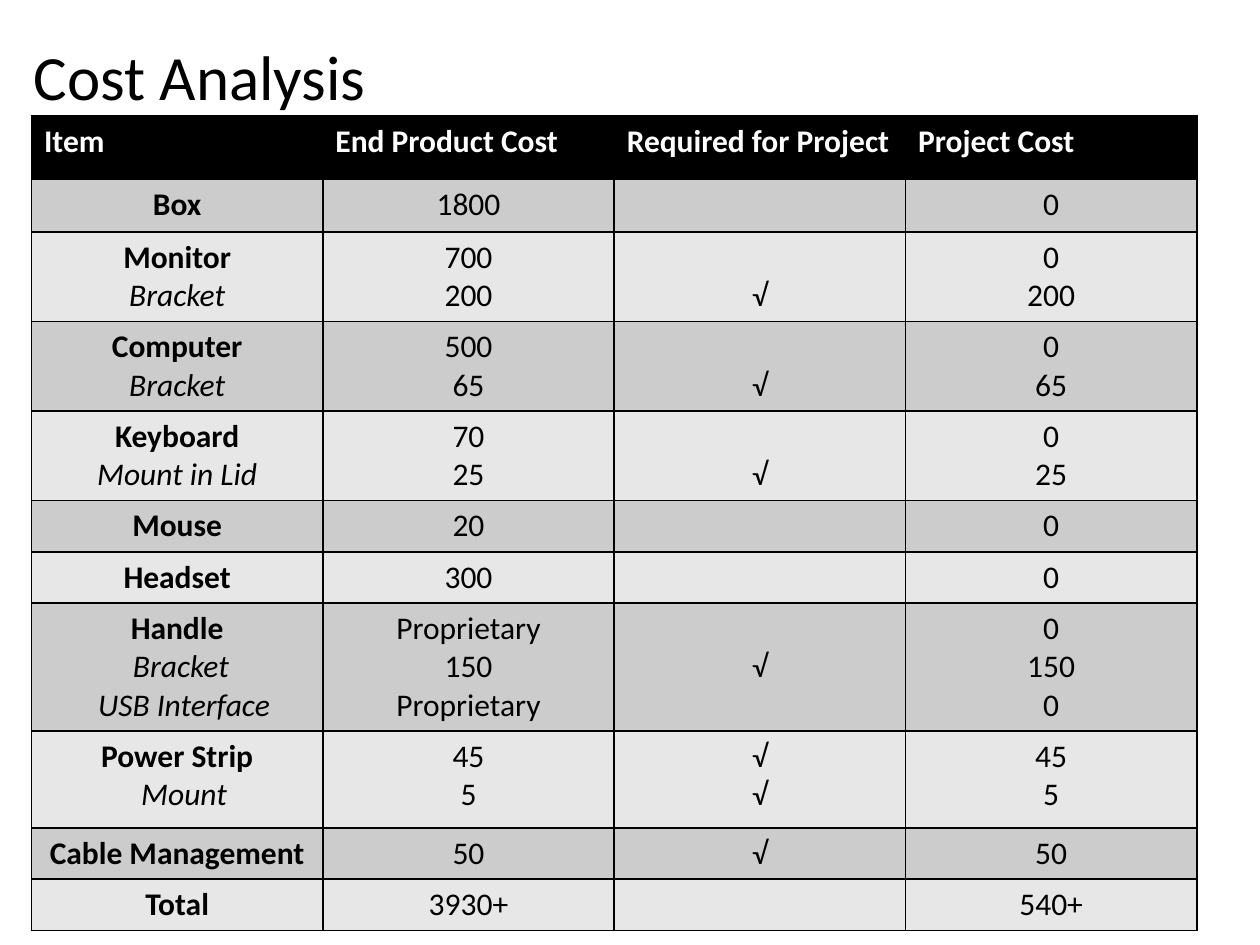
from lxml import etree
from pptx import Presentation
from pptx.dml.color import RGBColor
from pptx.enum.text import MSO_ANCHOR, MSO_AUTO_SIZE, PP_ALIGN
from pptx.oxml.ns import qn
from pptx.util import Inches, Pt

LEFT, CENTER = PP_ALIGN.LEFT, PP_ALIGN.CENTER
TOP, MIDDLE, BOTTOM = MSO_ANCHOR.TOP, MSO_ANCHOR.MIDDLE, MSO_ANCHOR.BOTTOM
GROW = MSO_AUTO_SIZE.SHAPE_TO_FIT_TEXT

FONT = "Calibri"
COLORS = {"text": "000000", "header": "000000", "header_text": "FFFFFF",
          "odd": "CCCCCC", "even": "E7E7E7", "border": "000000"}
TABLE_WIDTH = 9.25
HEADERS = ["Item", "End Product Cost", "Required for Project", "Project Cost"]
COSTS = [
    (0.42, "Box", "1800", "", "0", TOP),
    (0.70, "Monitor\nBracket", "700\n200", "√", "0\n200", BOTTOM),
    (0.70, "Computer\nBracket", "500\n65", "√", "0\n65", BOTTOM),
    (0.70, "Keyboard\nMount in Lid", "70\n25", "√", "0\n25", BOTTOM),
    (0.41, "Mouse", "20", "", "0", TOP),
    (0.40, "Headset", "300", "", "0", TOP),
    (1.00, "Handle\nBracket\nUSB Interface", "Proprietary\n150\nProprietary", "√",
     "0\n150\n0", MIDDLE),
    (0.77, "Power Strip\nMount", "45\n5", "√\n√", "45\n5", TOP),
    (0.40, "Cable Management", "50", "√", "50", TOP),
    (0.40, "Total", "3930+", "", "540+", TOP),
]
INDENTS = {("Handle", "Bracket"): 0.06, ("Handle", "USB Interface"): 0.11,
           ("Power Strip", "Mount"): 0.11}


def style_font(font, size, color, bold=False, italic=False):
    font.name = FONT
    font.size = Pt(size)
    font.bold = bold
    font.italic = italic
    font.color.rgb = RGBColor.from_string(COLORS[color])


def add_borders(cell):
    tcPr = cell._tc.get_or_add_tcPr()
    for i, side in enumerate(("lnL", "lnR", "lnT", "lnB")):
        ln = etree.Element(qn(f"a:{side}"), w=str(Pt(1)))
        fill = etree.SubElement(ln, qn("a:solidFill"))
        etree.SubElement(fill, qn("a:srgbClr"), val=COLORS["border"])
        tcPr.insert(i, ln)


def fill_cell(cell, text, fill, color="text", align=CENTER, anchor=TOP, bold=False):
    cell.fill.solid()
    cell.fill.fore_color.rgb = RGBColor.from_string(COLORS[fill])
    cell.vertical_anchor = anchor
    add_borders(cell)
    cell.text_frame.text = text
    for p in cell.text_frame.paragraphs:
        p.alignment = align
        style_font(p.font, 18, color, bold)
        for r in p.runs:
            style_font(r.font, 18, color, bold)


def style_item(cell):
    item, *parts = cell.text_frame.paragraphs
    for p in parts:
        indent = INDENTS.get((item.text, p.text))
        if indent:
            p._p.get_or_add_pPr().set("marL", str(Inches(indent)))
        for r in p.runs:
            style_font(r.font, 18, "text", italic=True)


def add_title(slide, text):
    sp = slide.shapes.add_textbox(Inches(0.17), Inches(0.25), Inches(2.86), Inches(0.71))
    tf = sp.text_frame
    tf.word_wrap = False
    tf.auto_size = GROW
    tf.text = text
    style_font(tf.paragraphs[0].runs[0].font, 36, "text")


def add_cost_table(slide):
    heights = [0.5] + [row[0] for row in COSTS]
    table = slide.shapes.add_table(
        len(heights), len(HEADERS), Inches(0.25), Inches(0.92),
        Inches(TABLE_WIDTH), Inches(sum(heights))).table
    for col in table.columns:
        col.width = Inches(TABLE_WIDTH / len(HEADERS))
    for row, height in zip(table.rows, heights):
        row.height = Inches(height)
    for c, text in enumerate(HEADERS):
        fill_cell(table.cell(0, c), text, "header", "header_text", LEFT, bold=True)
    for n, (_, *texts, check_anchor) in enumerate(COSTS, 1):
        fill = "odd" if n % 2 else "even"
        for c, text in enumerate(texts):
            anchor = check_anchor if c == 2 else TOP
            fill_cell(table.cell(n, c), text, fill, anchor=anchor, bold=c == 0)
        style_item(table.cell(n, 0))


def main():
    prs = Presentation()
    prs.slide_width, prs.slide_height = Inches(10), Inches(7.5)
    slide = prs.slides.add_slide(prs.slide_layouts[6])
    add_cost_table(slide)
    add_title(slide, "Cost Analysis")
    prs.save("out.pptx")


if __name__ == "__main__":
    main()
